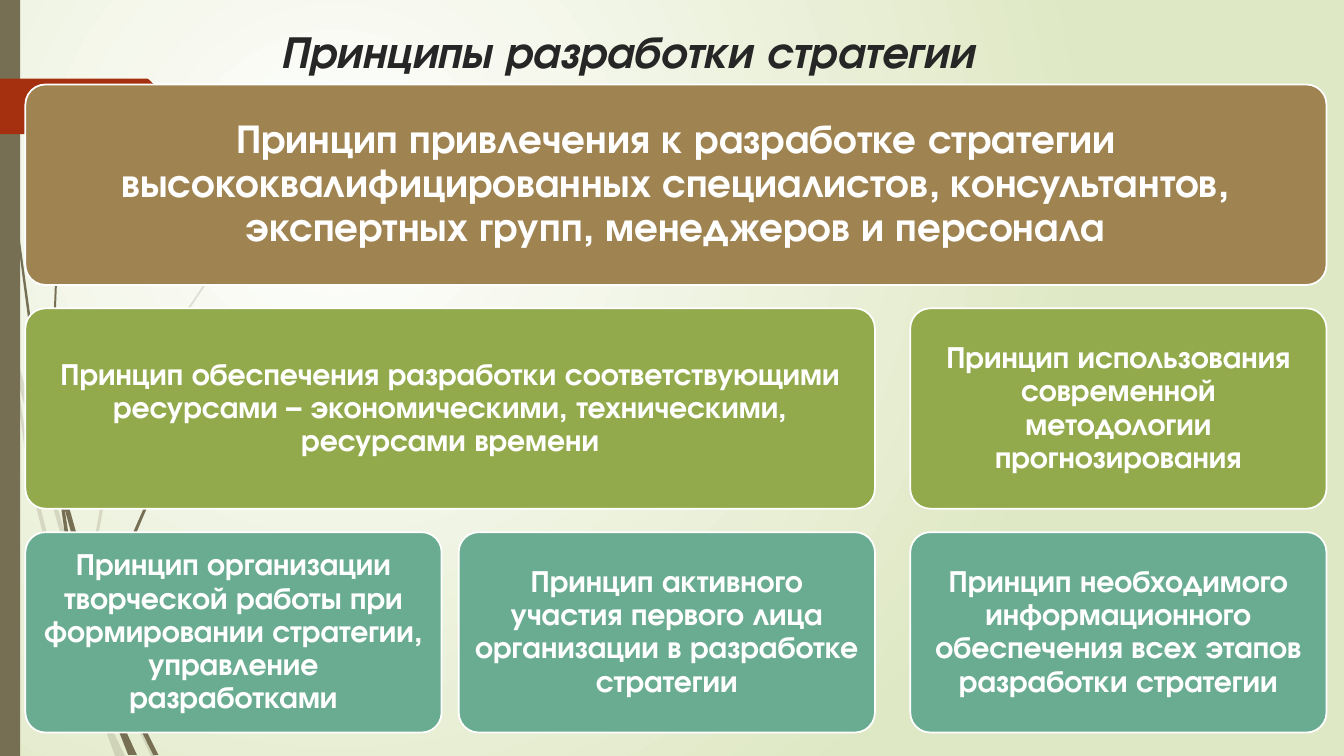
from lxml.etree import SubElement
from pptx import Presentation
from pptx.dml.color import RGBColor
from pptx.enum.shapes import MSO_SHAPE as Shape
from pptx.enum.text import MSO_ANCHOR as Anchor, PP_ALIGN as Align
from pptx.oxml.ns import qn
from pptx.util import Cm, Pt

FONT = "TeX Gyre Adventor"
OLIVE_GREY = "766F54"
WHITE = "FFFFFF"

COLUMN_LEFTS = (0.64, 11.56, 22.94)
COLUMN_WIDTH = 10.49
FIRST_ROW_TOP = 2.13
ROW_PITCH = 5.64
ROW_HEIGHT = 5.05
ROW_STYLES = (("9F8351", 29, 0.3), ("92AA4C", 22, 0.23), ("6AAC91", 22, 0.23))

PRINCIPLES = (
    (0, 0, 2, "Принцип привлечения к разработке стратегии высококвалифицированных "
              "специалистов, консультантов, экспертных групп, менеджеров и персонала"),
    (1, 0, 1, "Принцип обеспечения разработки соответствующими ресурсами – "
              "экономическими, техническими, ресурсами времени"),
    (2, 0, 0, "Принцип организации творческой работы при формировании стратегии, "
              "управление разработками"),
    (2, 1, 1, "Принцип активного участия первого лица организации в разработке стратегии"),
    (1, 2, 2, "Принцип использования современной методологии прогнозирования"),
    (2, 2, 2, "Принцип необходимого информационного обеспечения всех этапов "
              "разработки стратегии"),
)

PALE_BLADES = (
    ((0.28, 8.89), (0.23, 8.18), (0, 7.16), (0, 7.59), (0.25, 8.74)),
    ((0.36, 8.76), (1.57, 13.21), (2.16, 14.88), (2.34, 15.42), (3.23, 17.58),
     (3.94, 19.05), (3.81, 19.05), (3.12, 17.63), (2.24, 15.49), (1.47, 13.26),
     (0.43, 9.55)),
    ((0.28, 8.89), (0.43, 9.55), (0.79, 11.91), (1.78, 15.72), (2.36, 17.35),
     (2.67, 18.06), (3.15, 19.05), (2.9, 19.05), (2.57, 18.14), (2.34, 17.6),
     (1.65, 15.77), (0.71, 11.94)),
    ((2.24, 14.83), (2.79, 11.73), (4.06, 8.86), (5.82, 6.22), (6.81, 5.03),
     (7.37, 4.45), (7.92, 3.9), (7.34, 4.45), (6.81, 5), (5.79, 6.2),
     (4.01, 8.84), (2.72, 11.71), (2.16, 14.83), (2.24, 15.14)),
)
DARK_BLADES = (
    ((0.08, 0), (0.1, 1.22), (0.18, 2.79), (0.43, 5.92), (0.84, 9.02),
     (1.42, 12.12), (1.45, 12.22), (1.4, 11.51), (0.91, 9.02), (0.48, 5.89),
     (0.2, 2.77), (0.13, 1.22), (0.1, 0)),
    ((1.63, 12.83), (2.24, 15.04), (2.69, 16.38), (2.82, 16.66), (3.35, 17.98),
     (3.86, 19.02), (3.99, 19.02), (3.45, 17.93), (2.87, 16.48), (2.69, 16.03),
     (2.36, 14.99), (1.52, 11.99)),
    ((1.45, 12.12), (1.73, 14.15), (2.36, 16.74), (2.82, 17.98), (3.23, 19.02),
     (3.45, 19.02), (3.1, 18.26), (2.79, 17.55), (2.49, 16.69), (1.83, 14.12),
     (1.63, 12.83), (1.4, 11.4)),
    ((1.52, 11.99), (1.47, 11.51), (1.37, 8.86), (1.47, 6.22), (1.6, 4.9),
     (1.78, 3.58), (1.57, 4.9), (1.42, 6.22), (1.32, 8.86), (1.4, 11.4)),
    ((2.82, 16.08), (3.18, 14.02), (4.01, 12.09), (5.21, 10.31), (5.87, 9.5),
     (6.22, 9.12), (6.63, 8.74), (6.22, 9.09), (5.87, 9.47), (5.18, 10.29),
     (3.96, 12.04), (3.1, 14), (2.69, 16.03), (2.79, 16.28)),
)
MARKER = ((0, 1.98), (3.71, 1.98), (3.76, 2.01), (4.39, 2.64), (4.42, 2.69),
          (4.39, 2.74), (3.76, 3.38), (3.71, 3.4), (0, 3.38))


def rgb(hex_colour):
    return RGBColor.from_string(hex_colour)


def paint(shape, colour, opacity=100):
    shape.shadow.inherit = False
    shape.fill.solid()
    shape.fill.fore_color.rgb = rgb(colour)
    shape.line.fill.background()
    if opacity < 100:
        fill_colour = next(shape.element.iter(qn("a:srgbClr")))
        SubElement(fill_colour, qn("a:alpha"), val=str(opacity * 1000))


def set_background(slide):
    fill = slide.background.fill
    fill.gradient()
    for stop, colour in zip(fill.gradient_stops, (WHITE, "DFE8C4")):
        stop.color.rgb = rgb(colour)
    linear = next(slide.element.iter(qn("a:lin")))
    gradient = linear.getparent()
    gradient.remove(linear)
    radial = SubElement(gradient, qn("a:path"), path="circle")
    SubElement(radial, qn("a:fillToRect"), l="50000", t="50000", r="100000", b="100000")


def add_outline(slide, points, colour, opacity=100):
    start, *rest = [(x * 100, y * 100) for x, y in points]
    builder = slide.shapes.build_freeform(*start, scale=Cm(0.01))
    builder.add_line_segments(rest)
    paint(builder.convert_to_shape(), colour, opacity)


def write(shape, text, size, align):
    shape.text_frame.word_wrap = True
    paragraph = shape.text_frame.paragraphs[0]
    paragraph.text = text
    paragraph.alignment = align
    paragraph.font.name = FONT
    paragraph.font.size = Pt(size)
    paragraph.font.bold = True
    return paragraph


def add_title(slide, text):
    title = slide.shapes.add_textbox(Cm(6.81), Cm(0.46), Cm(24.77), Cm(1.68))
    heading = write(title, text, 32.4, Align.LEFT)
    heading.font.italic = True
    heading.font.color.rgb = rgb("262626")


def add_principle(slide, row, first_column, last_column, text):
    colour, size, inset = ROW_STYLES[row]
    left = COLUMN_LEFTS[first_column]
    width = COLUMN_LEFTS[last_column] + COLUMN_WIDTH - left
    card = slide.shapes.add_shape(
        Shape.ROUNDED_RECTANGLE, Cm(left), Cm(FIRST_ROW_TOP + row * ROW_PITCH),
        Cm(width), Cm(ROW_HEIGHT))
    card.adjustments[0] = 0.1
    paint(card, colour)
    card.line.color.rgb = rgb(WHITE)
    card.line.width = Pt(1.25)
    frame = card.text_frame
    frame.vertical_anchor = Anchor.MIDDLE
    frame.margin_left = frame.margin_right = Cm(inset)
    frame.margin_top = frame.margin_bottom = Cm(inset)
    principle = write(card, text, size, Align.CENTER)
    principle.line_spacing = 0.9
    principle.font.color.rgb = rgb(WHITE)


def main():
    deck = Presentation()
    deck.slide_width, deck.slide_height = Cm(33.87), Cm(19.05)
    slide = deck.slides.add_slide(deck.slide_layouts[6])
    set_background(slide)
    for blade in PALE_BLADES:
        add_outline(slide, blade, OLIVE_GREY, 20)
    for blade in DARK_BLADES:
        add_outline(slide, blade, OLIVE_GREY)
    side_bar = slide.shapes.add_shape(Shape.RECTANGLE, 0, 0, Cm(0.51), deck.slide_height)
    paint(side_bar, OLIVE_GREY)
    add_outline(slide, MARKER, "A53010")
    add_title(slide, "Принципы разработки стратегии")
    for principle in PRINCIPLES:
        add_principle(slide, *principle)
    deck.save("out.pptx")


if __name__ == "__main__":
    main()
